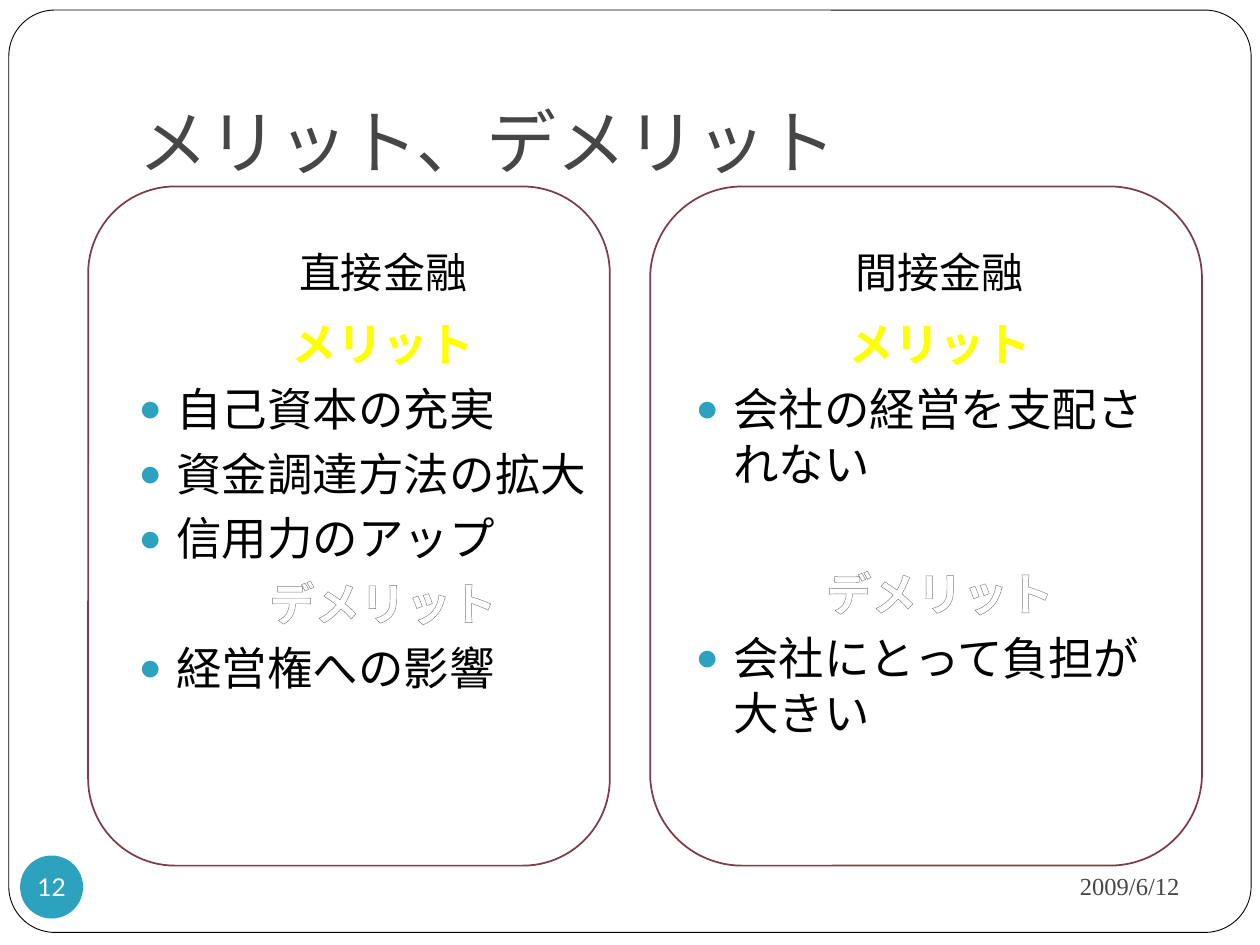
import pptx
import pptx.util
import pptx.dml.color
import pptx.enum.shapes
import pptx.enum.text
import pptx.oxml

Inches, Pt = pptx.util.Inches, pptx.util.Pt
SHAPE = pptx.enum.shapes.MSO_SHAPE
ALIGN = pptx.enum.text.PP_ALIGN
ANCHOR = pptx.enum.text.MSO_ANCHOR
NS = 'xmlns:a="http://schemas.openxmlformats.org/drawingml/2006/main"'
TEAL, GREY, PLUM = "2DA2BF", "464646", "7D3C4A"
SHEEN = [(0, "FFFFFF"), (9, "FFFFFF"), (50, "7F7F7F"), (79, "FFFFFF"), (100, "FFFFFF")]
BODY = dict(name="Times New Roman", size=Pt(26), bold=False)


def rgb(value):
    """Turn a hex string into a colour."""
    return pptx.dml.color.RGBColor.from_string(value)


def xml(text):
    """Parse a fragment in the drawing namespace."""
    return pptx.oxml.parse_xml(text.replace(">", f" {NS}>", 1))


def apply(obj, **values):
    """Set several attributes on one object."""
    for key, value in values.items():
        setattr(obj, key, value)


def place(sp, box):
    """Move an object to a box given in inches."""
    for key, value in zip(("left", "top", "width", "height"), box):
        setattr(sp, key, Inches(value))


def write(p, text, color, **font):
    """Add one formatted run to a paragraph."""
    r = p.add_run()
    r.text = text
    apply(r.font, **font)
    r.font.color.rgb = rgb(color)
    return r


def add_shape(s, kind, box, fill, line=None, width=1):
    """Draw a flat preset shape."""
    sp = s.shapes.add_shape(kind, *map(Inches, box))
    sp.shadow.inherit = False
    sp.fill.solid()
    sp.fill.fore_color.rgb = rgb(fill)
    if line:
        sp.line.color.rgb = rgb(line)
        sp.line.width = Pt(width)
    else:
        sp.line.fill.background()
    return sp


def outline(r, color, width):
    """Outline the letters of a run."""
    ln = xml(f'<a:ln w="{Pt(width)}"><a:solidFill><a:srgbClr val="{color}"/></a:solidFill></a:ln>')
    r.font._element.insert(0, ln)


def sheen(r):
    """Fill the letters of a run with a vertical gradient."""
    stops = "".join(f'<a:gs pos="{pos * 1000}"><a:srgbClr val="{c}"/></a:gs>' for pos, c in SHEEN)
    grad = xml(f'<a:gradFill><a:gsLst>{stops}</a:gsLst><a:lin ang="5400000" scaled="0"/></a:gradFill>')
    old = r.font._element.find(pptx.oxml.ns.qn("a:solidFill"))
    r.font._element.replace(old, grad)


def set_bullet(p, shown):
    """Give a paragraph its hanging indent and its bullet."""
    pPr = p._p.get_or_add_pPr()
    pPr.set("marL", str(Inches(0.3)))
    pPr.set("indent", str(-Inches(0.3)))
    if not shown:
        pPr.append(xml("<a:buNone></a:buNone>"))
        return
    for part in (f'<a:buClr><a:srgbClr val="{TEAL}"/></a:buClr>',
                 '<a:buSzPct val="85000"></a:buSzPct>', '<a:buChar char="●"></a:buChar>'):
        pPr.append(xml(part))


def add_section(tf, label, items, merit, gap=5.8):
    """Write a centred label followed by its bulleted points."""
    p = tf.paragraphs[0] if merit else tf.add_paragraph()
    apply(p, alignment=ALIGN.CENTER, space_before=Pt(gap))
    set_bullet(p, False)
    r = write(p, label, "FFFF00" if merit else "FFFFFF", **{**BODY, "bold": True})
    if merit:
        outline(r, "FFFF00", 0.71)
    else:
        sheen(r)
        outline(r, "7D7D7D", 0.83)
    for item in items:
        p = tf.add_paragraph()
        apply(p, alignment=ALIGN.LEFT, space_before=Pt(5.8))
        set_bullet(p, True)
        write(p, item, "000000", **BODY)


def add_panel(s, box, inset, holders, heading, merits, demerits, gap):
    """Fill one rounded panel with a heading and two sections."""
    x, y, w, h = box
    head, body = holders
    place(head, (x + inset, y + 0.1, 4.08, 0.83))
    place(body, (x + inset, y + 0.98, 4.08, 4.25))
    for sp, anchor in ((head, ANCHOR.BOTTOM), (body, ANCHOR.TOP)):
        apply(sp.text_frame, auto_size=pptx.enum.text.MSO_AUTO_SIZE.NONE,
              vertical_anchor=anchor, word_wrap=True)
    p = head.text_frame.paragraphs[0]
    apply(p, alignment=ALIGN.CENTER, space_before=Pt(5.8))
    write(p, heading, "000000", name="Lato", size=Pt(24), bold=False)
    add_section(body.text_frame, "メリット", merits, True)
    add_section(body.text_frame, "デメリット", demerits, False, gap)


def add_title(sp, box, text):
    """Place and format the title."""
    place(sp, box)
    tf = sp.text_frame
    apply(tf, auto_size=pptx.enum.text.MSO_AUTO_SIZE.NONE, vertical_anchor=ANCHOR.BOTTOM,
          margin_bottom=Inches(0.1))
    tf.paragraphs[0].alignment = ALIGN.LEFT
    write(tf.paragraphs[0], text, GREY, name="Lato", size=Pt(40), bold=False)


def add_footer(s, date_box, number_box, date, number):
    """Add the date and the page number in its disc."""
    sp = s.shapes.add_textbox(*map(Inches, date_box))
    apply(sp.text_frame, word_wrap=True, vertical_anchor=ANCHOR.MIDDLE)
    p = sp.text_frame.paragraphs[0]
    p.alignment = ALIGN.RIGHT
    write(p, date, GREY, name="Times New Roman", size=Pt(14))
    sp = add_shape(s, SHAPE.OVAL, number_box, TEAL)
    apply(sp.text_frame, word_wrap=False, vertical_anchor=ANCHOR.MIDDLE,
          margin_left=0, margin_right=0, margin_top=0, margin_bottom=0)
    p = sp.text_frame.paragraphs[0]
    p.alignment = ALIGN.CENTER
    write(p, number, "FFFFFF", name="Lato", size=Pt(14))


def main():
    """Build the slide and save it."""
    prs = pptx.Presentation()
    apply(prs, slide_width=Inches(10), slide_height=Inches(7.5))
    s = prs.slides.add_slide(prs.slide_layouts[4])
    title, *holders = list(s.placeholders)
    left, right = (0.7, 1.48, 4.14, 5.39), (5.16, 1.48, 4.38, 5.39)
    frame = add_shape(s, SHAPE.ROUNDED_RECTANGLE, (0.07, 0.08, 9.86, 7.32), "FFFFFF", "000000", 0.5)
    frame.adjustments[0] = 0.05
    backs = [frame] + [add_shape(s, SHAPE.ROUNDED_RECTANGLE, box, "FFFFFF", PLUM)
                       for box in (right, left)]
    for sp in backs:
        title._element.addprevious(sp._element)
    add_title(title, (1, 0.3, 8.5, 1.25), "メリット、デメリット")
    add_panel(s, left, 0.3, holders[:2], "直接金融",
              ["自己資本の充実", "資金調達方法の拡大", "信用力のアップ"], ["経営権への影響"], 5.8)
    add_panel(s, right, 0.26, holders[2:], "間接金融",
              ["会社の経営を支配されない"], ["会社にとって負担が大きい"], 43)
    add_footer(s, (6.75, 6.77, 2.71, 0.52), (0.16, 6.79, 0.5, 0.5), "2009/6/12", "12")
    prs.save("out.pptx")


if __name__ == "__main__":
    main()
